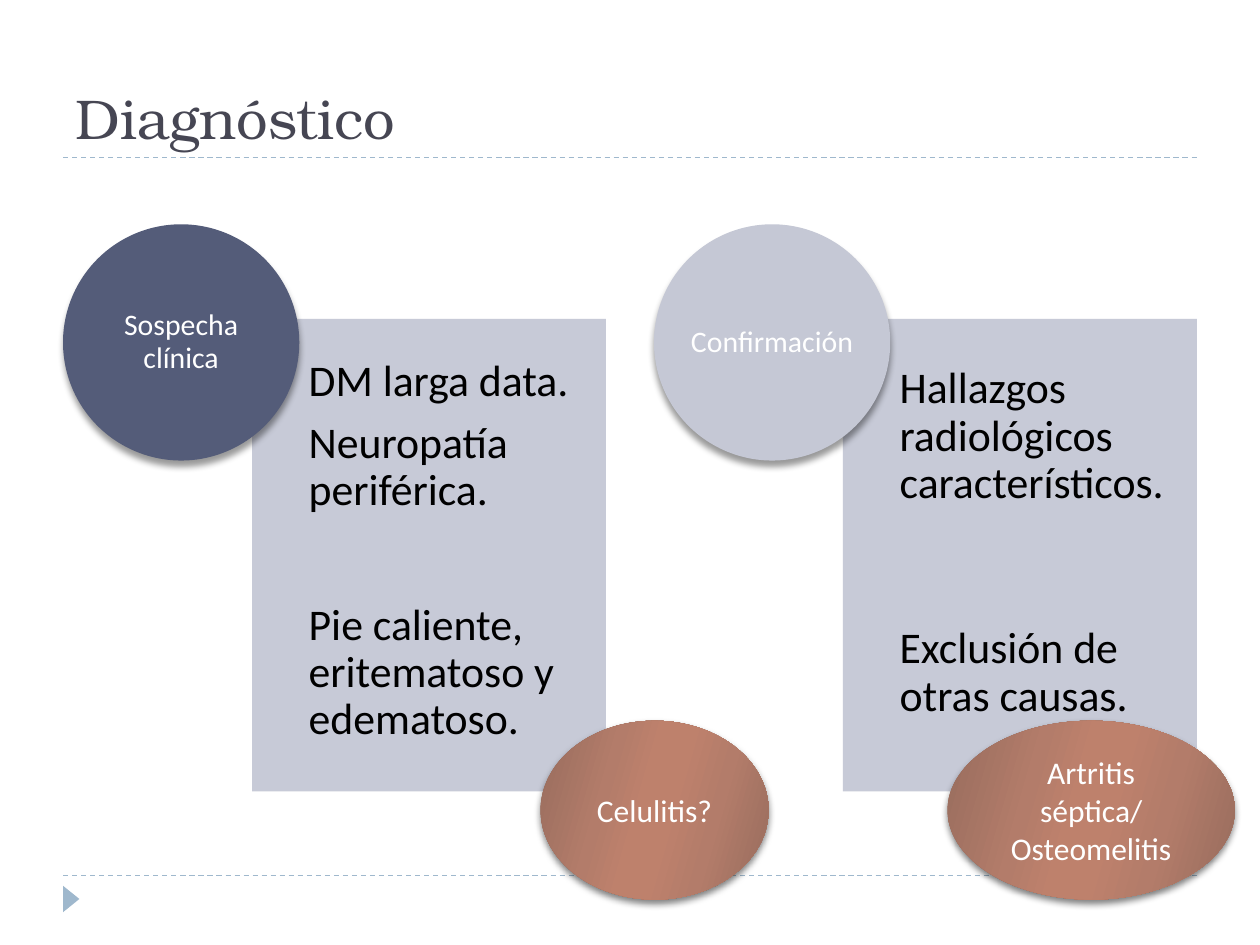
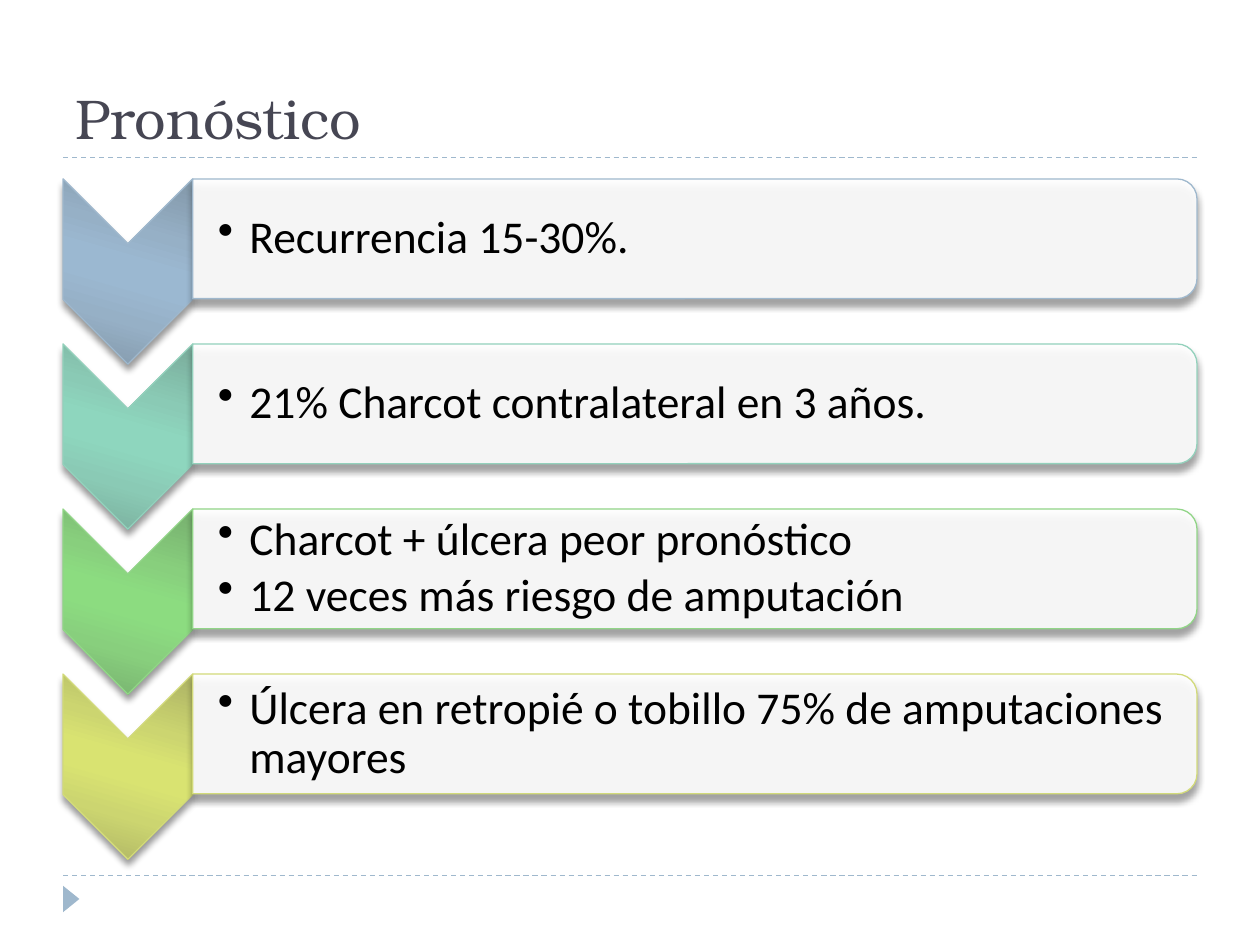
from dataclasses import dataclass

from lxml import etree
from pptx import Presentation
from pptx import util as u
from pptx.dml.color import RGBColor
from pptx.enum import dml, shapes, text
from pptx.oxml.ns import qn

COLS, ROWS = 20, 15
SHAPE = shapes.MSO_SHAPE
ALIGN = text.PP_ALIGN
TITLE_FONT, BODY_FONT = "TeX Gyre Bonum", "Calibri"
TITLE, ACCENT, BLACK, WHITE = "464653", "9FB8CD", "000000", "FFFFFF"
PANEL = "C2C5D3"
STOPS = (0, 30, 45, 55, 73, 100)

prs = Presentation()
prs.slide_width, prs.slide_height = u.Inches(10), u.Inches(7.5)


@dataclass(frozen=True)
class Box:
    """A place on the slide, in columns and rows."""
    x: float
    y: float
    w: float
    h: float

    def emu(self) -> tuple[int, int, int, int]:
        col, row = prs.slide_width / COLS, prs.slide_height / ROWS
        return (round(self.x * col), round(self.y * row),
                round(self.w * col), round(self.h * row))


@dataclass(frozen=True)
class Shadow:
    opacity: int
    distance: float
    blur: float = 4


@dataclass(frozen=True)
class Gradient:
    edge: str
    shoulder: str
    centre: str

    def colours(self) -> tuple[str, ...]:
        half = (self.edge, self.shoulder, self.centre)
        return half + half[::-1]


@dataclass(frozen=True)
class TextStyle:
    size: float
    colour: str = BLACK
    align: ALIGN = ALIGN.LEFT
    spacing: float = 0.9
    after: float = 0.35
    bullet: bool = False


@dataclass(frozen=True)
class Criterion:
    heading: str
    circle_fill: str
    panels: tuple[tuple[str, ...], ...]


@dataclass(frozen=True)
class Differential:
    label: str
    x: float
    w: float


@dataclass(frozen=True)
class Outcome:
    lines: tuple[str, ...]
    outline: str
    gradient: Gradient


DEEP, SOFT = Shadow(40, 3.4), Shadow(50, 2)
COPPER = Gradient("976C5D", "B37C6A", "BE816C")
PANEL_TEXT = TextStyle(25)
CIRCLE_TEXT = TextStyle(17, WHITE, ALIGN.CENTER)
DIFFERENTIAL_TEXT = TextStyle(18, WHITE, ALIGN.CENTER, 1, 0)
OUTCOME_TEXT = TextStyle(26, after=0.15, bullet=True)

CRITERIA = (
    Criterion("Sospecha clínica", "545C79",
              (("DM larga data.", "Neuropatía periférica."),
               ("Pie caliente, eritematoso y edematoso.",))),
    Criterion("Confirmación", "C5C8D5",
              (("Hallazgos radiológicos característicos.",),
               ("Exclusión de otras causas.",))),
)
DIFFERENTIALS = (
    Differential("Celulitis?", 8.58, 3.62),
    Differential("Artritis séptica/ Osteomelitis", 15.04, 4.56),
)
OUTCOMES = (
    Outcome(("Recurrencia 15-30%.",), ACCENT,
            Gradient("8297A8", "96B0C6", "9BB8D1")),
    Outcome(("21% Charcot contralateral en 3 años.",), "93D1BC",
            Gradient("79AB9A", "8ACAB5", "8ED6BE")),
    Outcome(("Charcot + úlcera peor pronóstico",
             "12 veces más riesgo de amputación"), "91D587",
            Gradient("76AE6E", "88CF7D", "8CDC80")),
    Outcome(("Úlcera en retropié o tobillo 75% de amputaciones mayores",),
            "D2DA7A", Gradient("ACB264", "CCD570", "D9E371")),
)


def rgb(colour: str) -> RGBColor:
    return RGBColor.from_string(colour)


def add_xml(parent, tag: str, **attributes):
    """Append a DrawingML element."""
    values = {name: str(value) for name, value in attributes.items()}
    return etree.SubElement(parent, qn(f"a:{tag}"), values)


def paint(sp, fill: str | Gradient, opacity: int) -> None:
    if isinstance(fill, Gradient):
        sp.fill.gradient()
        grad = sp._element.spPr.find(qn("a:gradFill"))
        stops = grad.find(qn("a:gsLst"))
        for stop in list(stops):
            stops.remove(stop)
        for pos, colour in zip(STOPS, fill.colours()):
            add_xml(add_xml(stops, "gs", pos=pos * 1000), "srgbClr", val=colour)
        lin = grad.find(qn("a:lin"))
        lin.set("ang", str(16 * 60000))
        lin.set("scaled", "1")
        return
    sp.fill.solid()
    sp.fill.fore_color.rgb = rgb(fill)
    if opacity < 100:
        colour = sp._element.spPr.find(f"{qn('a:solidFill')}/{qn('a:srgbClr')}")
        add_xml(colour, "alpha", val=opacity * 1000)


def cast(sp, shadow: Shadow) -> None:
    effects = sp._element.spPr.find(qn("a:effectLst"))
    outer = add_xml(effects, "outerShdw", blurRad=u.Pt(shadow.blur),
                    dist=u.Pt(shadow.distance), dir=90 * 60000, rotWithShape=0)
    add_xml(add_xml(outer, "srgbClr", val=BLACK), "alpha", val=shadow.opacity * 1000)


def add_shape(s, kind: SHAPE, box: Box, fill: str | Gradient, outline: str = "",
              opacity: int = 100, shadow: Shadow | None = None, turned: bool = False):
    """Draw a shape that fills box, also when it is turned by 90 degrees."""
    x, y, w, h = box.emu()
    if turned:
        x, y, w, h = x + (w - h) // 2, y + (h - w) // 2, h, w
    sp = s.shapes.add_shape(kind, x, y, w, h)
    sp.rotation = 90 if turned else 0
    sp.shadow.inherit = False
    paint(sp, fill, opacity)
    if outline:
        sp.line.color.rgb = rgb(outline)
        sp.line.width = u.Pt(0.75)
    else:
        sp.line.fill.background()
    if shadow:
        cast(sp, shadow)
    return sp


def write(sp, lines: tuple[str, ...], style: TextStyle,
          insets: tuple[float, ...] = (0.1, 0.05, 0.1, 0.05)) -> None:
    """Fill a shape with paragraphs; insets are left, top, right, bottom inches."""
    tf = sp.text_frame
    tf.word_wrap = True
    tf.vertical_anchor = text.MSO_ANCHOR.MIDDLE
    tf.margin_left, tf.margin_top, tf.margin_right, tf.margin_bottom = map(u.Inches, insets)
    for i, line in enumerate(lines):
        p = tf.add_paragraph() if i else tf.paragraphs[0]
        p.alignment = style.align
        p.line_spacing = style.spacing
        p.space_after = u.Pt(style.size * style.after)
        if style.bullet:
            pPr = p._p.get_or_add_pPr()
            pPr.set("marL", str(u.Inches(0.25)))
            pPr.set("indent", str(-u.Inches(0.25)))
            add_xml(pPr, "buChar", char="•")
        add_run(p, line, BODY_FONT, style.size, style.colour)


def add_run(p, line: str, font: str, size: float, colour: str) -> None:
    r = p.add_run()
    r.text = line
    r.font.name, r.font.size = font, u.Pt(size)
    r.font.color.rgb = rgb(colour)


def add_rule(s, row: float) -> None:
    x, y, w, _ = Box(1, row, 18, 0).emu()
    rule = s.shapes.add_connector(shapes.MSO_CONNECTOR.STRAIGHT, x, y, x + w, y)
    rule.line.color.rgb = rgb(ACCENT)
    rule.line.width = u.Pt(0.75)
    rule.line.dash_style = dml.MSO_LINE.DASH
    add_xml(rule._element.spPr, "effectLst")


def add_slide(title: str):
    """Start a slide with the shared title, rules and corner marker."""
    s = prs.slides.add_slide(prs.slide_layouts[5])
    for row in (2.5, 13.9):
        add_rule(s, row)
    add_shape(s, SHAPE.ISOSCELES_TRIANGLE, Box(1, 14.06, 0.26, 0.42), ACCENT, turned=True)
    sp = s.shapes.title
    sp.left, sp.top, sp.width, sp.height = Box(1, 0.34, 18, 2.16).emu()
    tf = sp.text_frame
    tf.vertical_anchor = text.MSO_ANCHOR.BOTTOM
    p = tf.paragraphs[0]
    p.alignment = ALIGN.LEFT
    add_run(p, title, TITLE_FONT, 32, TITLE)
    return s


def add_criterion(s, x: float, criterion: Criterion) -> None:
    side = 3.75
    for i, lines in enumerate(criterion.panels):
        panel = add_shape(s, SHAPE.RECTANGLE, Box(x + 3, 5.06 + i * side, 5.62, side),
                          PANEL, opacity=90)
        write(panel, lines, PANEL_TEXT, (0.45, 0.19, 0.19, 0.19))
    circle = add_shape(s, SHAPE.OVAL, Box(x, 3.56, side, side),
                       criterion.circle_fill, shadow=DEEP)
    write(circle, (criterion.heading,), CIRCLE_TEXT, (0, 0, 0, 0))


def add_outcome(s, y: float, outcome: Outcome) -> None:
    add_shape(s, SHAPE.CHEVRON, Box(1, y, 2.06, 2.94), outcome.gradient,
              outcome.outline, shadow=DEEP, turned=True)
    add_shape(s, SHAPE.ROUND_2_SAME_RECTANGLE, Box(3.06, y, 15.94, 1.9), WHITE,
              outcome.outline, 90, DEEP, turned=True)
    label = s.shapes.add_textbox(*Box(3.06, y + 0.09, 15.86, 1.72).emu())
    write(label, outcome.lines, OUTCOME_TEXT, (0.2, 0.02, 0.02, 0.02))


def main() -> None:
    s = add_slide("Diagnóstico")
    for i, criterion in enumerate(CRITERIA):
        add_criterion(s, 1 + i * 9.38, criterion)
    for item in DIFFERENTIALS:
        oval = add_shape(s, SHAPE.OVAL, Box(item.x, 11.44, item.w, 2.84),
                         COPPER, shadow=SOFT)
        write(oval, (item.label,), DIFFERENTIAL_TEXT)

    s = add_slide("Pronóstico")
    for i, outcome in enumerate(OUTCOMES):
        add_outcome(s, 2.84 + i * 2.62, outcome)
    prs.save("out.pptx")


if __name__ == "__main__":
    main()
